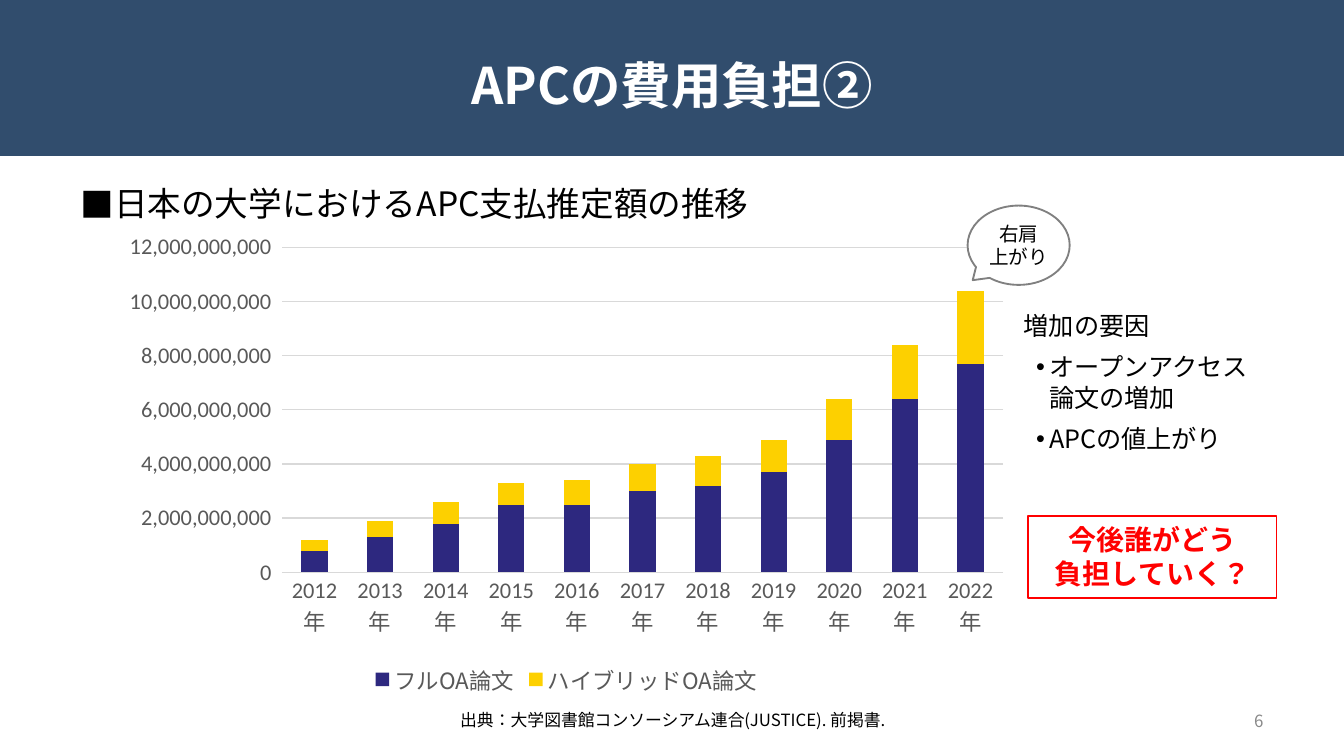
"""Build a slide on the rising cost of article processing charges in Japan."""
from dataclasses import dataclass
from typing import Optional

import lxml.etree
import pptx
import pptx.chart.data
import pptx.dml.color
import pptx.enum.chart
import pptx.enum.lang
import pptx.enum.shapes
import pptx.enum.text
import pptx.oxml.ns
import pptx.util

Inches = pptx.util.Inches
Pt = pptx.util.Pt
Align = pptx.enum.text.PP_ALIGN
Anchor = pptx.enum.text.MSO_ANCHOR
AutoSize = pptx.enum.text.MSO_AUTO_SIZE
ShapeType = pptx.enum.shapes.MSO_SHAPE

CJK_FONT = "Noto Sans CJK JP"
CHART_FONT = "Calibri"
COLORS = {
    "band": "314D6D", "white": "FFFFFF", "black": "000000", "red": "FF0000",
    "number": "898989", "outline": "808080", "axis": "595959",
    "grid": "D9D9D9", "full": "2D287F", "hybrid": "FDD000",
}
YEARS = [f"{year}年" for year in range(2012, 2023)]
HUNDRED_MILLION = 100_000_000


@dataclass
class Line:
    """One paragraph with its bullet, indents in inches and space in points."""
    text: str
    bullet: Optional[str] = None
    margin: float = 0
    indent: float = 0
    before: float = 0
    bullet_font: str = CJK_FONT


@dataclass
class Style:
    """The look of a block of text."""
    size: float
    color: str = "black"
    bold: bool = False
    align: Align = Align.LEFT
    anchor: Anchor = Anchor.TOP
    insets: tuple = (0.1, 0.05, 0.1, 0.05)
    fit: AutoSize = AutoSize.NONE


@dataclass
class Panel:
    """A filled preset shape with optional outline and text."""
    kind: ShapeType
    place: tuple
    lines: list
    style: Style
    outline: Optional[str] = None
    weight: float = 0.75
    adjustments: tuple = ()


@dataclass
class CostSeries:
    """One stacked series, in hundreds of millions of yen."""
    name: str
    color: str
    amounts: tuple


PANELS = [
    Panel(ShapeType.OVAL_CALLOUT, (7.2, 1.53, 0.76, 0.59),
          [Line("右肩"), Line("上がり")],
          Style(10.5, align=Align.CENTER, anchor=Anchor.MIDDLE, insets=(0, 0, 0, 0)),
          "outline", 1, (-0.45, 0.44)),
    Panel(ShapeType.RECTANGLE, (7.65, 3.84, 1.85, 0.61),
          [Line("今後誰がどう"), Line("負担していく？")],
          Style(15, "red", True, Align.CENTER, fit=AutoSize.SHAPE_TO_FIT_TEXT), "red"),
    Panel(ShapeType.RECTANGLE, (7.52, 2.26, 1.98, 1.18),
          [Line("増加の要因"),
           Line("オープンアクセス論文の増加", "•", 0.19, -0.1, 6, "Arial"),
           Line("APCの値上がり", "•", 0.19, -0.1, 6, "Arial")],
          Style(13.5, fit=AutoSize.SHAPE_TO_FIT_TEXT)),
]
COSTS = [
    CostSeries("フルOA論文", "full", (8, 13, 18, 25, 25, 30, 32, 37, 49, 64, 77)),
    CostSeries("ハイブリッドOA論文", "hybrid", (4, 6, 8, 8, 9, 10, 11, 12, 15, 20, 27)),
]


def rgb(name: str) -> pptx.dml.color.RGBColor:
    """Return the named colour."""
    return pptx.dml.color.RGBColor.from_string(COLORS[name])


def set_all(target, values: dict) -> None:
    """Set each named attribute on the target."""
    for name, value in values.items():
        setattr(target, name, value)


def set_font(font, size: float, color: str, name: str, bold: bool = False) -> None:
    """Format a font."""
    set_all(font, {"size": Pt(size), "name": name, "bold": bold})
    font.color.rgb = rgb(color)


def place_box(box, place: tuple) -> None:
    """Move and size a box."""
    set_all(box, dict(zip(("left", "top", "width", "height"), map(Inches, place))))


def add_element(parent, tag: str, attribute: str, value: str) -> None:
    """Append a drawing element with one attribute."""
    lxml.etree.SubElement(parent, pptx.oxml.ns.qn(tag)).set(attribute, value)


def write_lines(box, lines: list, style: Style) -> None:
    """Fill a box with formatted paragraphs."""
    frame = box.text_frame
    sides = ("margin_left", "margin_top", "margin_right", "margin_bottom")
    set_all(frame, dict(zip(sides, map(Inches, style.insets))))
    set_all(frame, {"word_wrap": True, "vertical_anchor": style.anchor,
                    "auto_size": style.fit})
    for index, line in enumerate(lines):
        para = frame.add_paragraph() if index else frame.paragraphs[0]
        properties = para._p.get_or_add_pPr()
        properties.set("marL", str(Inches(line.margin)))
        properties.set("indent", str(Inches(line.indent)))
        if line.bullet:
            add_element(properties, "a:buFont", "typeface", line.bullet_font)
            add_element(properties, "a:buChar", "char", line.bullet)
        set_all(para, {"alignment": style.align, "space_before": Pt(line.before)})
        span = para.add_run()
        span.text = line.text
        set_font(span.font, style.size, style.color, CJK_FONT, style.bold)
        span.font.language_id = pptx.enum.lang.MSO_LANGUAGE_ID.JAPANESE
        add_element(span._r.get_or_add_rPr(), "a:ea", "typeface", CJK_FONT)


def add_filled(page, kind: ShapeType, place: tuple, color: str):
    """Add a plain filled shape without outline or shadow."""
    box = page.shapes.add_shape(kind, *map(Inches, place))
    box.shadow.inherit = False
    box.fill.solid()
    box.fill.fore_color.rgb = rgb(color)
    box.line.fill.background()
    return box


def add_panel(page, panel: Panel) -> None:
    """Draw a panel with its text."""
    box = add_filled(page, panel.kind, panel.place, "white")
    for index, value in enumerate(panel.adjustments):
        box.adjustments[index] = value
    if panel.outline:
        box.line.color.rgb = rgb(panel.outline)
        box.line.width = Pt(panel.weight)
    write_lines(box, panel.lines, panel.style)


def add_label(page, place: tuple, text: Line, style: Style) -> None:
    """Draw a one-paragraph text box."""
    write_lines(page.shapes.add_textbox(*map(Inches, place)), [text], style)


def add_cost_chart(page, place: tuple) -> None:
    """Draw the stacked column chart of estimated payments."""
    kinds = pptx.enum.chart
    data = pptx.chart.data.CategoryChartData()
    data.categories = YEARS
    for cost in COSTS:
        data.add_series(cost.name, [amount * HUNDRED_MILLION for amount in cost.amounts])
    chart = page.shapes.add_chart(
        kinds.XL_CHART_TYPE.COLUMN_STACKED, *map(Inches, place), data).chart
    set_all(chart, {"has_title": False, "has_legend": True})
    set_font(chart.font, 10, "black", CHART_FONT)
    set_all(chart.legend, {"position": kinds.XL_LEGEND_POSITION.BOTTOM,
                           "include_in_layout": False})
    set_font(chart.legend.font, 12, "axis", CJK_FONT)
    plot = chart.plots[0]
    set_all(plot, {"gap_width": 150, "overlap": 100, "vary_by_categories": False})
    for series, cost in zip(plot.series, COSTS):
        series.format.fill.solid()
        series.format.fill.fore_color.rgb = rgb(cost.color)
    for axis in (chart.category_axis, chart.value_axis):
        set_all(axis, {"major_tick_mark": kinds.XL_TICK_MARK.NONE,
                       "minor_tick_mark": kinds.XL_TICK_MARK.NONE})
        set_font(axis.tick_labels.font, 12, "axis", CHART_FONT)
    values = chart.value_axis
    set_all(values, {"minimum_scale": 0, "maximum_scale": 120 * HUNDRED_MILLION,
                     "major_unit": 20 * HUNDRED_MILLION, "has_major_gridlines": True})
    set_all(values.tick_labels, {"number_format": r"#,##0_);[Red]\(#,##0\)",
                                 "number_format_is_linked": False})
    values.format.line.fill.background()
    for rule in (chart.category_axis.format.line, values.major_gridlines.format.line):
        rule.color.rgb = rgb("grid")
        rule.width = Pt(0.75)


def main() -> None:
    """Build and save the deck."""
    deck = pptx.Presentation()
    set_all(deck, {"slide_width": Inches(10), "slide_height": Inches(10 * 9 / 16)})
    page = deck.slides.add_slide(deck.slide_layouts[1])
    title, body = page.shapes.title, page.placeholders[1]
    band = add_filled(page, ShapeType.RECTANGLE, (0, 0, 10, 1.16), "band")
    title.element.addprevious(band.element)
    place_box(title, (0.5, 0.1, 9, 1.06))
    write_lines(title, [Line("APCの費用負担②")],
                Style(27, "white", True, Align.CENTER, Anchor.MIDDLE))
    place_box(body, (0.5, 1.31, 9, 3.71))
    write_lines(body, [Line("日本の大学におけるAPC支払推定額の推移", "■", 0.22, -0.22)], Style(18))
    add_label(page, (7.17, 5.21, 2.33, 0.3), Line("6"),
              Style(9, "number", align=Align.RIGHT, anchor=Anchor.MIDDLE))
    add_label(page, (3.28, 5.2, 3.43, 0.31),
              Line("出典：大学図書館コンソーシアム連合(JUSTICE). 前掲書.", margin=0.44, indent=-0.44),
              Style(9, align=Align.CENTER, anchor=Anchor.MIDDLE, insets=(0.12, 0.05, 0.1, 0.05)))
    add_cost_chart(page, (0.83, 1.67, 6.77, 3.55))
    for panel in PANELS:
        add_panel(page, panel)
    deck.save("out.pptx")


if __name__ == "__main__":
    main()
